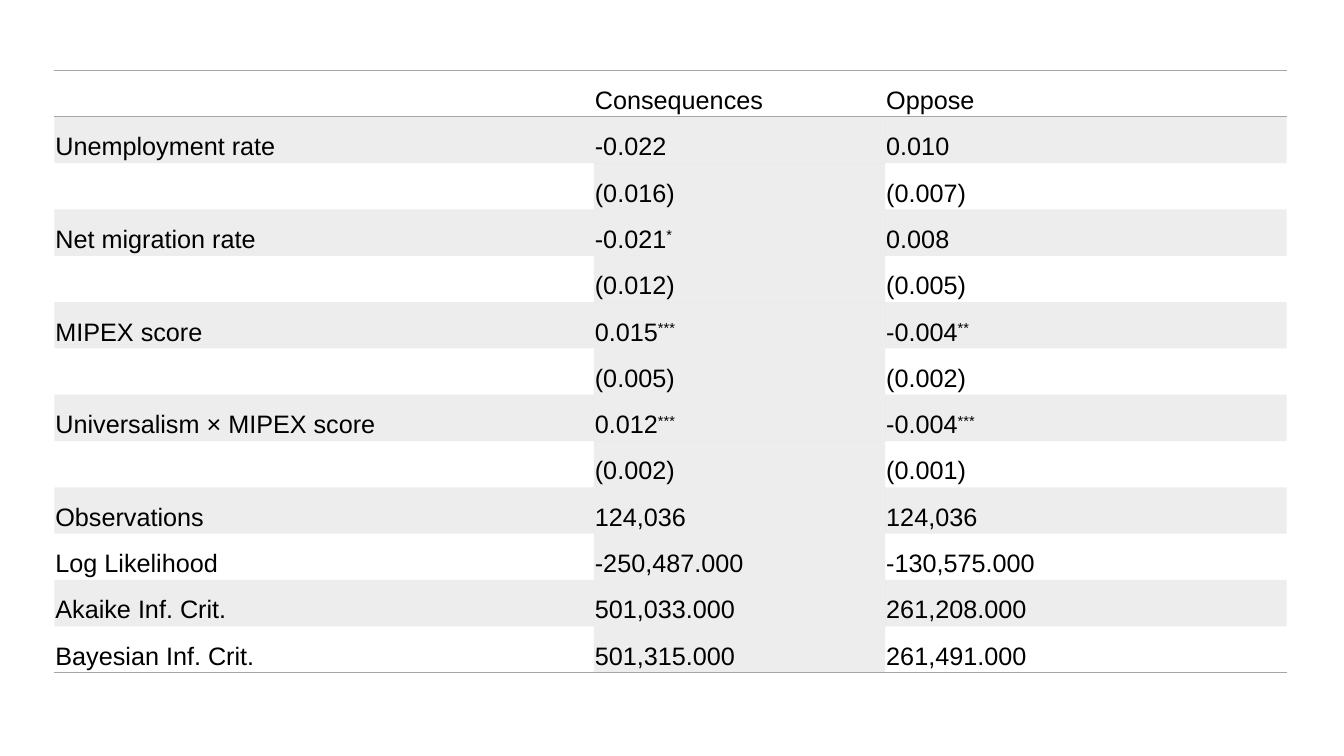
from lxml import etree
from pptx import Presentation
from pptx.dml.color import RGBColor
from pptx.enum.text import MSO_ANCHOR
from pptx.oxml.ns import qn
from pptx.util import Inches, Pt

MIDDLE = MSO_ANCHOR.MIDDLE
NO_STYLE = "{2D5ABB26-0587-4C30-8999-92F81FD0307C}"
SLIDE_WIDTH, SLIDE_HEIGHT = 13.33, 7.5

MODELS = [
    ("", "Consequences", "Oppose"),
    ("Unemployment rate", "-0.022", "0.010"),
    ("", "(0.016)", "(0.007)"),
    ("Net migration rate", "-0.021*", "0.008"),
    ("", "(0.012)", "(0.005)"),
    ("MIPEX score", "0.015***", "-0.004**"),
    ("", "(0.005)", "(0.002)"),
    ("Universalism × MIPEX score", "0.012***", "-0.004***"),
    ("", "(0.002)", "(0.001)"),
    ("Observations", "124,036", "124,036"),
    ("Log Likelihood", "-250,487.000", "-130,575.000"),
    ("Akaike Inf. Crit.", "501,033.000", "261,208.000"),
    ("Bayesian Inf. Crit.", "501,315.000", "261,491.000"),
]


def color(value):
    return RGBColor.from_string(value)


def across(percent):
    return Inches(SLIDE_WIDTH * percent / 100)


def down(percent):
    return Inches(SLIDE_HEIGHT * percent / 100)


class RegressionPage:
    font, size = "Arial", 18
    ink, gray = "000000", "A5A5A5"
    inset = Inches(0.01)

    def __init__(self, deck):
        self.page = deck.slides.add_slide(deck.slide_layouts[6])

    def table(self, rows, left, top, widths, row_height):
        """Draw a ruled table; positions and sizes are percentages of the slide."""
        frame = self.page.shapes.add_table(
            len(rows), len(widths), across(left), down(top),
            across(sum(widths)), down(row_height * len(rows)))
        table = frame.table
        table.first_row = table.horz_banding = False
        next(table._tbl.iter(qn("a:tableStyleId"))).text = NO_STYLE
        for column, width in zip(table.columns, widths):
            column.width = across(width)
        last = len(rows) - 1
        for r, texts in enumerate(rows):
            table.rows[r].height = down(row_height)
            for c, text in enumerate(texts):
                cell = table.cell(r, c)
                self.cell_text(cell, text)
                self.shade(cell, r % 2 == 1 or (c == 1 and r > 0))
                if r in (0, last):
                    self.rule(cell, "a:lnB")
                if r == 0:
                    self.rule(cell, "a:lnT")

    def cell_text(self, cell, text):
        """Set the value and raise its significance stars."""
        cell.vertical_anchor = MIDDLE
        cell.margin_left = cell.margin_right = self.inset
        cell.margin_top = cell.margin_bottom = self.inset
        para = cell.text_frame.paragraphs[0]
        para.line_spacing = 1.5
        para.font.size = Pt(self.size)
        value = text.rstrip("*")
        stars = text[len(value):]
        for part in filter(None, (value, stars)):
            span = para.add_run()
            span.text = part
            span.font.name = self.font
            span.font.size = Pt(self.size)
            span.font.color.rgb = color(self.ink)
            if part == stars:
                span.font._element.set("baseline", "30000")

    def shade(self, cell, filled):
        if not filled:
            cell.fill.background()
            return
        cell.fill.solid()
        cell.fill.fore_color.rgb = color(self.gray)
        tint = next(cell._tc.tcPr.iter(qn("a:srgbClr")))
        etree.SubElement(tint, qn("a:alpha"), val="20000")

    def rule(self, cell, side):
        """Add a border; call for the bottom before the top to keep XML order."""
        line = etree.Element(qn(side), w=str(Pt(1)))
        fill = etree.SubElement(line, qn("a:solidFill"))
        etree.SubElement(fill, qn("a:srgbClr"), val=self.gray)
        cell._tc.tcPr.insert(0, line)


def main():
    deck = Presentation()
    deck.slide_width, deck.slide_height = across(100), down(100)
    RegressionPage(deck).table(
        MODELS, left=4.05, top=9.33, widths=(40.14, 21.68, 29.86), row_height=6.13)
    deck.save("out.pptx")


if __name__ == "__main__":
    main()
